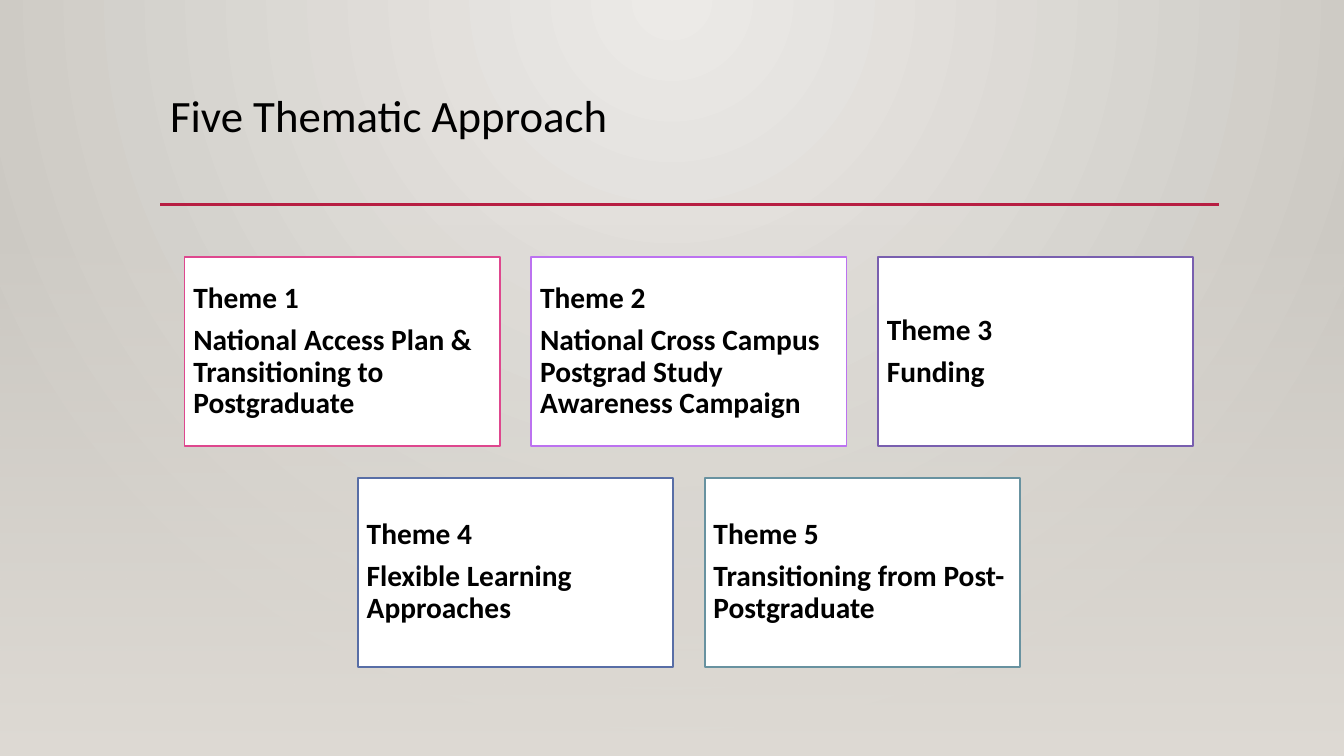
from dataclasses import dataclass

from lxml.etree import SubElement
from pptx import Presentation
from pptx.dml.color import RGBColor
from pptx.enum.shapes import MSO_CONNECTOR, MSO_SHAPE
from pptx.enum.text import MSO_ANCHOR, PP_ALIGN
from pptx.oxml.ns import qn
from pptx.util import Pt


@dataclass(frozen=True)
class Theme:
    font: str = "Calibri"
    head: float = 32
    body: float = 21
    ink: str = "000000"
    card: str = "FFFFFF"
    rule: str = "B71E42"
    glow: tuple = ("ECEAE7", "CAC7C1")
    floor: str = "DFDBD5"


THEME = Theme()
WIDE, HIGH = 960, 540

# Card grid: width, height, gap, middle and top of the rows
CARD_W, CARD_H, GAP = 225.2, 135.1, 22.5
MID, TOP = 492.1, 183.6

ROWS = [
    [
        ("Theme 1", "National Access Plan & Transitioning to Postgraduate", "DE478E"),
        ("Theme 2", "National Cross Campus Postgrad Study Awareness Campaign", "BC72F0"),
        ("Theme 3", "Funding", "795FAF"),
    ],
    [
        ("Theme 4", "Flexible Learning Approaches", "586EA6"),
        ("Theme 5", "Transitioning from Post-Postgraduate", "6892A0"),
    ],
]


def color(code):
    return RGBColor.from_string(code)


def write(frame, lines, size, bold=False, after=0, inset=(7.2, 3.6),
          anchor=MSO_ANCHOR.TOP):
    """Fill a text frame with one paragraph per line."""
    frame.word_wrap = True
    frame.vertical_anchor = anchor
    frame.margin_left = frame.margin_right = Pt(inset[0])
    frame.margin_top = frame.margin_bottom = Pt(inset[1])
    for i, line in enumerate(lines):
        para = frame.add_paragraph() if i else frame.paragraphs[0]
        para.alignment = PP_ALIGN.LEFT
        para.line_spacing = 0.9
        para.space_after = Pt(after)
        run = para.add_run()
        run.text = line
        font = run.font
        font.name, font.size, font.bold = THEME.font, Pt(size), bold
        font.color.rgb = color(THEME.ink)


def blend(fill, codes):
    """Give a fill a two-stop gradient."""
    fill.gradient()
    for stop, code, spot in zip(fill.gradient_stops, codes, (0, 1)):
        stop.color.rgb = color(code)
        stop.position = spot


def add_glow(slide):
    """Radial light from the top middle of the background."""
    blend(slide.background.fill, THEME.glow)
    grad = slide.element.find(".//" + qn("a:gradFill"))
    grad.remove(grad.find(qn("a:lin")))
    ring = SubElement(grad, qn("a:path"), path="circle")
    SubElement(ring, qn("a:fillToRect"), l="43000", t="0", r="43000", b="100000")


def add_floor(slide, top):
    """Band that fades in towards the bottom edge."""
    band = slide.shapes.add_shape(
        MSO_SHAPE.RECTANGLE, Pt(0), Pt(top), Pt(WIDE), Pt(HIGH - top))
    band.shadow.inherit = False
    band.line.fill.background()
    blend(band.fill, (THEME.floor, THEME.floor))
    band.fill.gradient_angle = 270
    first = band.element.find(".//" + qn("a:srgbClr"))
    SubElement(first, qn("a:alpha"), val="0")


def add_title(slide, text):
    box = slide.shapes.add_textbox(Pt(114.5), Pt(63.4), Pt(756), Pt(82.8))
    write(box.text_frame, [text], THEME.head)


def add_rule(slide, left, right, y):
    line = slide.shapes.add_connector(
        MSO_CONNECTOR.STRAIGHT, Pt(left), Pt(y), Pt(right), Pt(y))
    line.line.color.rgb = color(THEME.rule)
    line.line.width = Pt(2.5)
    SubElement(line.element.spPr, qn("a:effectLst"))


def add_card(slide, left, top, name, text, edge):
    card = slide.shapes.add_shape(
        MSO_SHAPE.RECTANGLE, Pt(left), Pt(top), Pt(CARD_W), Pt(CARD_H))
    card.shadow.inherit = False
    card.fill.solid()
    card.fill.fore_color.rgb = color(THEME.card)
    card.line.color.rgb = color(edge)
    card.line.width = Pt(1.25)
    write(card.text_frame, [name, text], THEME.body, bold=True, after=7.35,
          inset=(6.3, 6.3), anchor=MSO_ANCHOR.MIDDLE)


def main():
    deck = Presentation()
    deck.slide_width, deck.slide_height = Pt(WIDE), Pt(HIGH)
    slide = deck.slides.add_slide(deck.slide_layouts[6])

    # Backdrop
    add_glow(slide)
    add_floor(slide, 159)

    # Heading
    add_title(slide, "Five Thematic Approach")
    add_rule(slide, 114.5, 870.5, 146)

    # Theme cards, each row centred
    for r, row in enumerate(ROWS):
        span = len(row) * (CARD_W + GAP) - GAP
        for c, card in enumerate(row):
            left = MID - span / 2 + c * (CARD_W + GAP)
            add_card(slide, left, TOP + r * (CARD_H + GAP), *card)

    deck.save("out.pptx")


if __name__ == "__main__":
    main()
